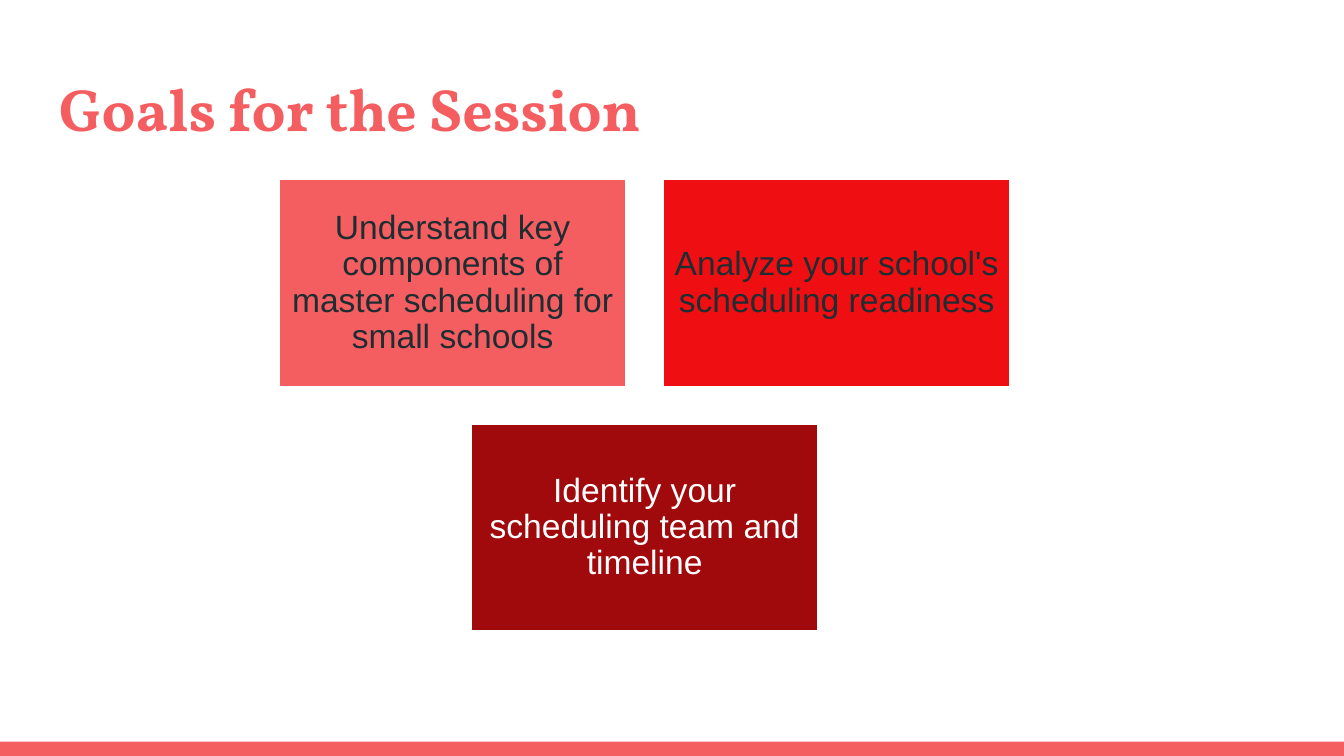
import pptx
import pptx.dml.color
import pptx.enum.shapes
import pptx.enum.text
import pptx.util

Pt = pptx.util.Pt
COLOURS = {
    "coral": "F55E61",
    "red": "EF0F13",
    "maroon": "A00A0D",
    "ink": "1E2D31",
    "white": "FFFFFF",
}
SLIDE_WIDTH, SLIDE_HEIGHT = 720, 405
GOAL_WIDTH, GOAL_HEIGHT, GAP = 187, 112.2, 18.7
GOALS_LEFT, GOALS_TOP = 149, 95.6
GOALS = [
    (0, 0, "Understand key components of master scheduling for small schools", "coral", "ink"),
    (1, 0, "Analyze your school's scheduling readiness", "red", "ink"),
    (0.5, 1, "Identify your scheduling team and timeline", "maroon", "white"),
]


def colour(name):
    return pptx.dml.color.RGBColor.from_string(COLOURS[name])


def write(shape, text, font, size, ink, inset, bold=False):
    frame = shape.text_frame
    frame.word_wrap = True
    frame.margin_left = frame.margin_right = Pt(inset)
    frame.margin_top = frame.margin_bottom = Pt(inset)
    frame.text = text
    style = frame.paragraphs[0].runs[0].font
    style.name, style.size, style.bold = font, Pt(size), bold
    style.color.rgb = colour(ink)
    return frame


def add_block(slide, left, top, width, height, fill):
    block = slide.shapes.add_shape(
        pptx.enum.shapes.MSO_SHAPE.RECTANGLE, Pt(left), Pt(top), Pt(width), Pt(height)
    )
    block.shadow.inherit = False
    block.fill.solid()
    block.fill.fore_color.rgb = colour(fill)
    block.line.fill.background()
    return block


def add_title(slide, text):
    title = slide.shapes.add_textbox(Pt(24.5), Pt(31), Pt(671), Pt(49))
    write(title, text, "Vollkorn", 32, "coral", 7.2, bold=True)


def add_goal(slide, column, row, text, fill, ink):
    left = GOALS_LEFT + column * (GOAL_WIDTH + GAP)
    top = GOALS_TOP + row * (GOAL_HEIGHT + GAP)
    goal = add_block(slide, left, top, GOAL_WIDTH, GOAL_HEIGHT, fill)
    goal.line.color.rgb = colour("white")
    goal.line.width = Pt(2)
    frame = write(goal, text, "Arial", 18, ink, 5)
    frame.vertical_anchor = pptx.enum.text.MSO_ANCHOR.MIDDLE
    frame.paragraphs[0].alignment = pptx.enum.text.PP_ALIGN.CENTER
    frame.paragraphs[0].line_spacing = 0.9


def main():
    deck = pptx.Presentation()
    deck.slide_width, deck.slide_height = Pt(SLIDE_WIDTH), Pt(SLIDE_HEIGHT)
    slide = deck.slides.add_slide(deck.slide_layouts[6])
    footer_height = 7.7
    add_block(slide, 0, SLIDE_HEIGHT - footer_height, SLIDE_WIDTH, footer_height, "coral")
    add_title(slide, "Goals for the Session")
    for goal in GOALS:
        add_goal(slide, *goal)
    deck.save("out.pptx")


if __name__ == "__main__":
    main()
